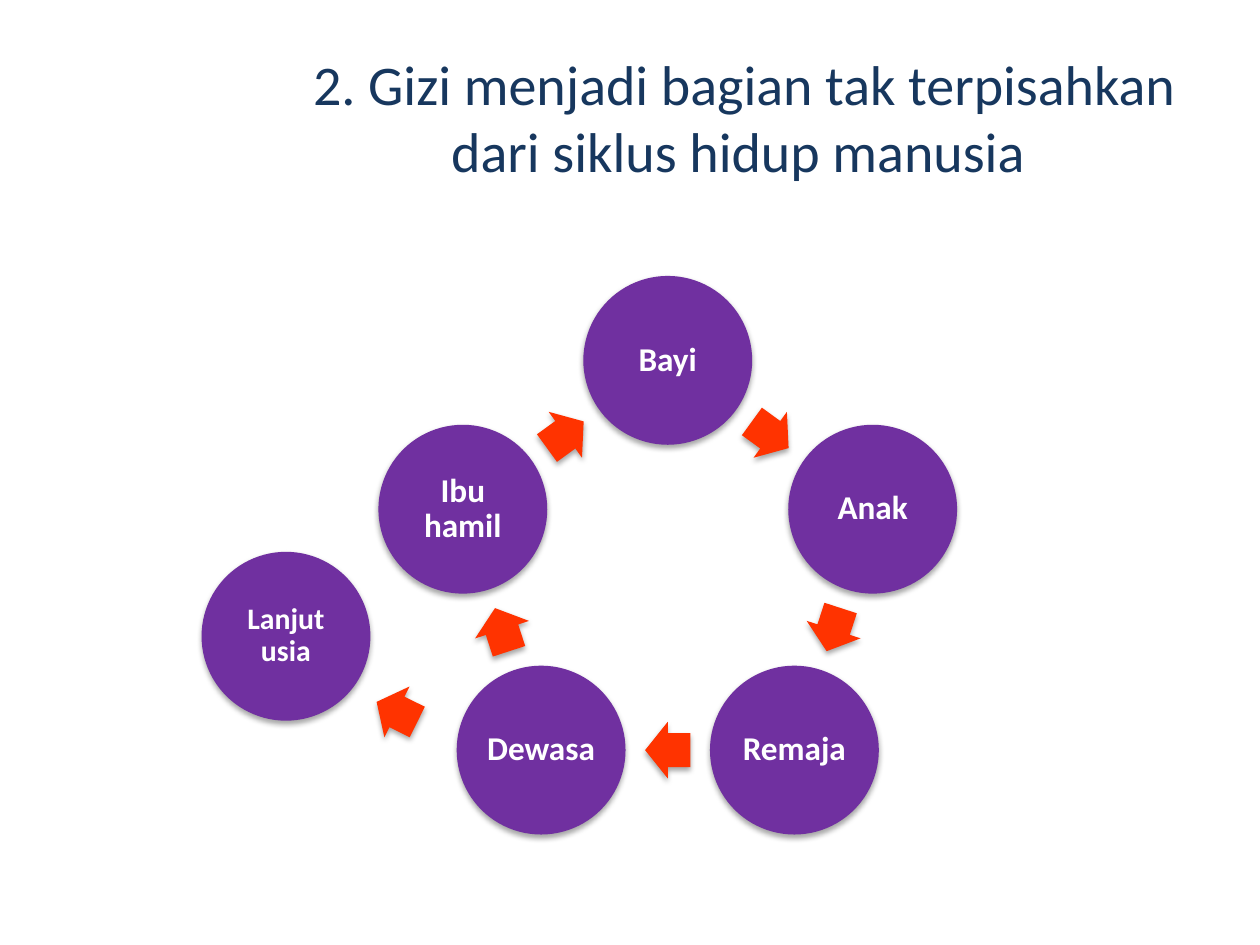
import math

from lxml import etree
from pptx import Presentation
from pptx import util as u
from pptx.dml.color import RGBColor
from pptx.enum import shapes, text
from pptx.oxml.ns import qn

TITLE = "2. Gizi menjadi bagian tak terpisahkan dari siklus hidup manusia "
STAGES = ["Bayi", "Anak", "Remaja", "Dewasa", "Ibu hamil"]
LAST_STAGE = "Lanjut usia"

NAVY, PURPLE, ORANGE, WHITE = "17375E", "7030A0", "FF3300", "FFFFFF"
FONT = "Calibri"
WIDTH, HEIGHT = 10, 7.5
TITLE_BOX = (2.32, 0.3, 7.18, 1.25)
CYCLE_CENTRE, CYCLE_RADIUS = (5.3, 4.57), 1.71
CIRCLE_SIZE = (1.34, 1.34)
ARROW_SIZE = (0.36, 0.45)
LAST_CENTRE = (2.27, 5.05)
LAST_ARROW_CENTRE, LAST_ARROW_ANGLE = (3.15, 5.65), 206.3


def colour(value):
    return RGBColor.from_string(value)


def write(shape, words, size, hex_colour, bold=False, spacing=1.0, inset=None):
    frame = shape.text_frame
    frame.word_wrap = True
    frame.vertical_anchor = text.MSO_ANCHOR.MIDDLE
    if inset is not None:
        for side in ("left", "right", "top", "bottom"):
            setattr(frame, f"margin_{side}", u.Inches(inset))
    paragraph = frame.paragraphs[0]
    paragraph.alignment = text.PP_ALIGN.CENTER
    paragraph.line_spacing = spacing
    run = paragraph.add_run()
    run.text = words
    for name, value in {"name": FONT, "size": u.Pt(size), "bold": bold}.items():
        setattr(run.font, name, value)
    run.font.color.rgb = colour(hex_colour)


def add_soft_shadow(shape):
    shape.shadow.inherit = False
    effects = shape._element.spPr.find(qn("a:effectLst"))
    shadow = etree.SubElement(
        effects, qn("a:outerShdw"), blurRad=str(u.Pt(3.1)), dist=str(u.Pt(1.8)),
        dir="5400000", rotWithShape="0")
    black = etree.SubElement(shadow, qn("a:srgbClr"), val="000000")
    etree.SubElement(black, qn("a:alpha"), val="35000")


def add_centred(slide, kind, centre, size, fill):
    corner = [middle - length / 2 for middle, length in zip(centre, size)]
    shape = slide.shapes.add_shape(kind, *map(u.Inches, (*corner, *size)))
    shape.fill.solid()
    shape.fill.fore_color.rgb = colour(fill)
    shape.line.fill.background()
    add_soft_shadow(shape)
    return shape


def add_stage(slide, words, centre, size=19):
    circle = add_centred(slide, shapes.MSO_SHAPE.OVAL, centre, CIRCLE_SIZE, PURPLE)
    write(circle, words, size, WHITE, bold=True, spacing=0.9, inset=0.03)


def add_arrow(slide, centre, angle):
    arrow = add_centred(slide, shapes.MSO_SHAPE.RIGHT_ARROW, centre, ARROW_SIZE, ORANGE)
    arrow.adjustments[0] = 0.6
    arrow.adjustments[1] = 0.5
    arrow.rotation = angle


def cycle_point(turn, radius):
    """Point on the cycle, with turn in degrees clockwise from the top."""
    angle = math.radians(turn)
    x, y = CYCLE_CENTRE
    return x + radius * math.sin(angle), y - radius * math.cos(angle)


def main():
    presentation = Presentation()
    presentation.slide_width = u.Inches(WIDTH)
    presentation.slide_height = u.Inches(HEIGHT)
    slide = presentation.slides.add_slide(presentation.slide_layouts[6])

    title = slide.shapes.add_textbox(*map(u.Inches, TITLE_BOX))
    write(title, TITLE, 32, NAVY)

    step = 360 / len(STAGES)
    arrow_radius = CYCLE_RADIUS * math.cos(math.radians(step / 2))
    for index, stage in enumerate(STAGES):
        turn = index * step
        add_stage(slide, stage, cycle_point(turn, CYCLE_RADIUS))
        halfway = turn + step / 2
        add_arrow(slide, cycle_point(halfway, arrow_radius), halfway)

    add_stage(slide, LAST_STAGE, LAST_CENTRE, size=17)
    add_arrow(slide, LAST_ARROW_CENTRE, LAST_ARROW_ANGLE)
    presentation.save("out.pptx")


if __name__ == "__main__":
    main()
